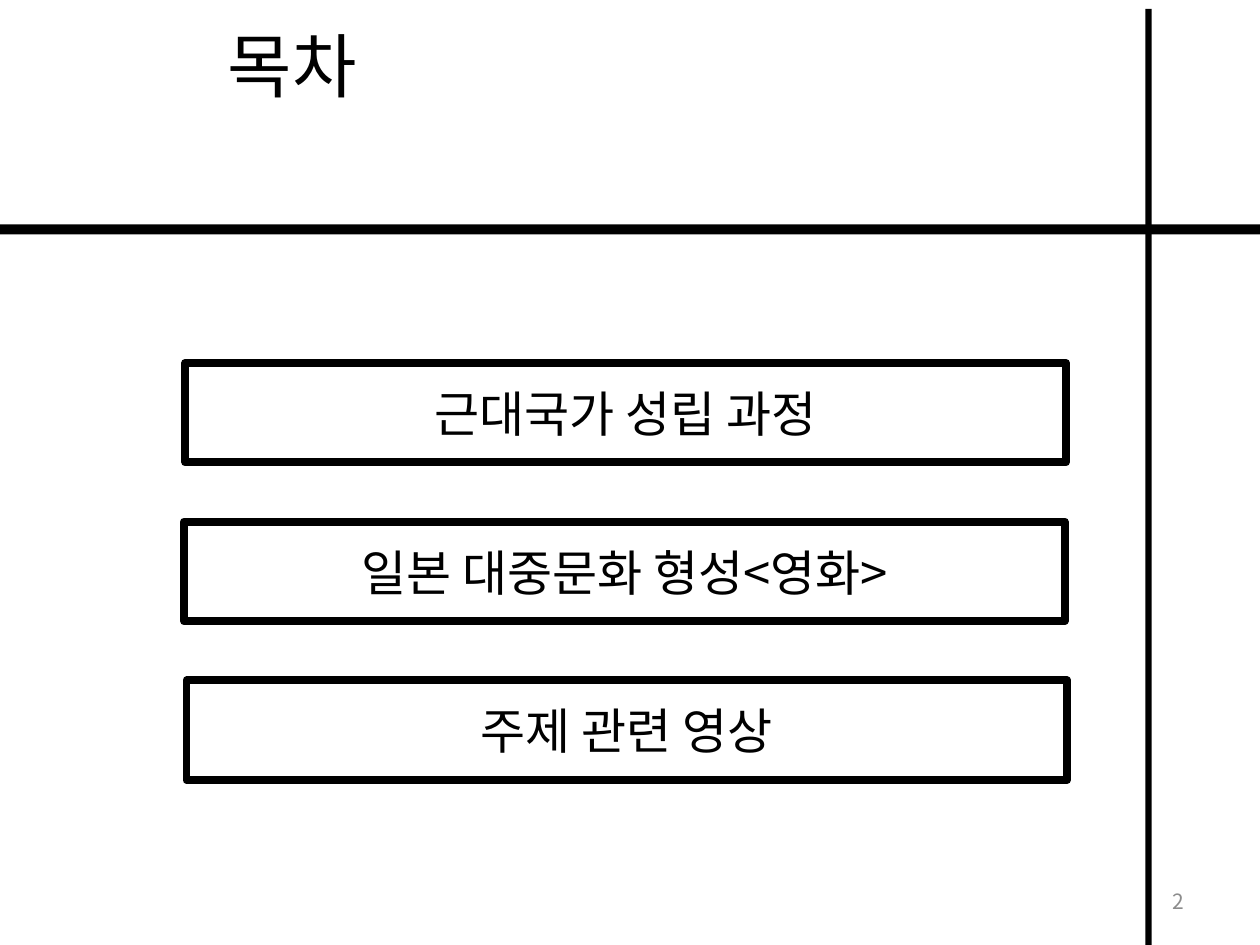
from lxml.etree import SubElement
from pptx import Presentation
from pptx.dml.color import RGBColor
from pptx.enum.shapes import MSO_SHAPE
from pptx.enum.text import MSO_ANCHOR, MSO_AUTO_SIZE, PP_ALIGN
from pptx.oxml.ns import qn
from pptx.util import Inches, Pt

TITLE = "목차"
TOPICS = [  # text, left edge
    ("근대국가 성립 과정", 1.47),
    ("일본 대중문화 형성<영화>", 1.46),
    ("주제 관련 영상", 1.48),
]
PAGE_NUMBER = "2"
BARS = [(-0.05, 1.78, 10.05, 0.08), (9.09, 0.07, 0.05, 7.51)]

FONT = "Noto Sans CJK KR"
COLORS = {"ink": "000000", "number": "8C8C8C"}
TOPIC_TOP, TOPIC_STEP = 2.88, 1.26
TOPIC_W, TOPIC_H = 6.99, 0.79


def color(name):
    return RGBColor.from_string(COLORS[name])


def set_text(sp, text, size, ink="ink", align=PP_ALIGN.LEFT, anchor=MSO_ANCHOR.MIDDLE):
    tf = sp.text_frame
    tf.word_wrap = True
    tf.vertical_anchor = anchor
    p = tf.paragraphs[0]
    p.text = text
    p.alignment = align
    p.font.size = Pt(size)
    p.font.name = FONT
    p.font.color.rgb = color(ink)
    # Hangul takes its typeface from the East Asian slot
    SubElement(p.font._element, qn("a:ea"), typeface=FONT)
    return tf


def add_rect(s, *box):
    sp = s.shapes.add_shape(MSO_SHAPE.RECTANGLE, *map(Inches, box))
    sp.shadow.inherit = False
    return sp


def add_bar(s, box):
    sp = add_rect(s, *box)
    sp.fill.solid()
    sp.fill.fore_color.rgb = color("ink")
    sp.line.fill.background()


def add_topic(s, i, text, left):
    sp = add_rect(s, left, TOPIC_TOP + i * TOPIC_STEP, TOPIC_W, TOPIC_H)
    sp.fill.background()
    sp.line.color.rgb = color("ink")
    sp.line.width = Pt(4.5)
    set_text(sp, text, 28, align=PP_ALIGN.CENTER)


def add_label(s, box, text, size, **style):
    sp = s.shapes.add_textbox(*map(Inches, box))
    return set_text(sp, text, size, **style)


def main():
    prs = Presentation()
    prs.slide_width, prs.slide_height = Inches(10), Inches(7.5)
    s = prs.slides.add_slide(prs.slide_layouts[6])

    for box in BARS:
        add_bar(s, box)
    tf = add_label(s, (1.71, 0.13, 1.32, 0.77), TITLE, 40, anchor=MSO_ANCHOR.TOP)
    tf.word_wrap = False
    tf.auto_size = MSO_AUTO_SIZE.SHAPE_TO_FIT_TEXT
    for i, (text, left) in enumerate(TOPICS):
        add_topic(s, i, text, left)
    add_label(s, (7.17, 6.95, 2.33, 0.4), PAGE_NUMBER, 12,
              ink="number", align=PP_ALIGN.RIGHT)

    prs.save("out.pptx")


if __name__ == "__main__":
    main()
